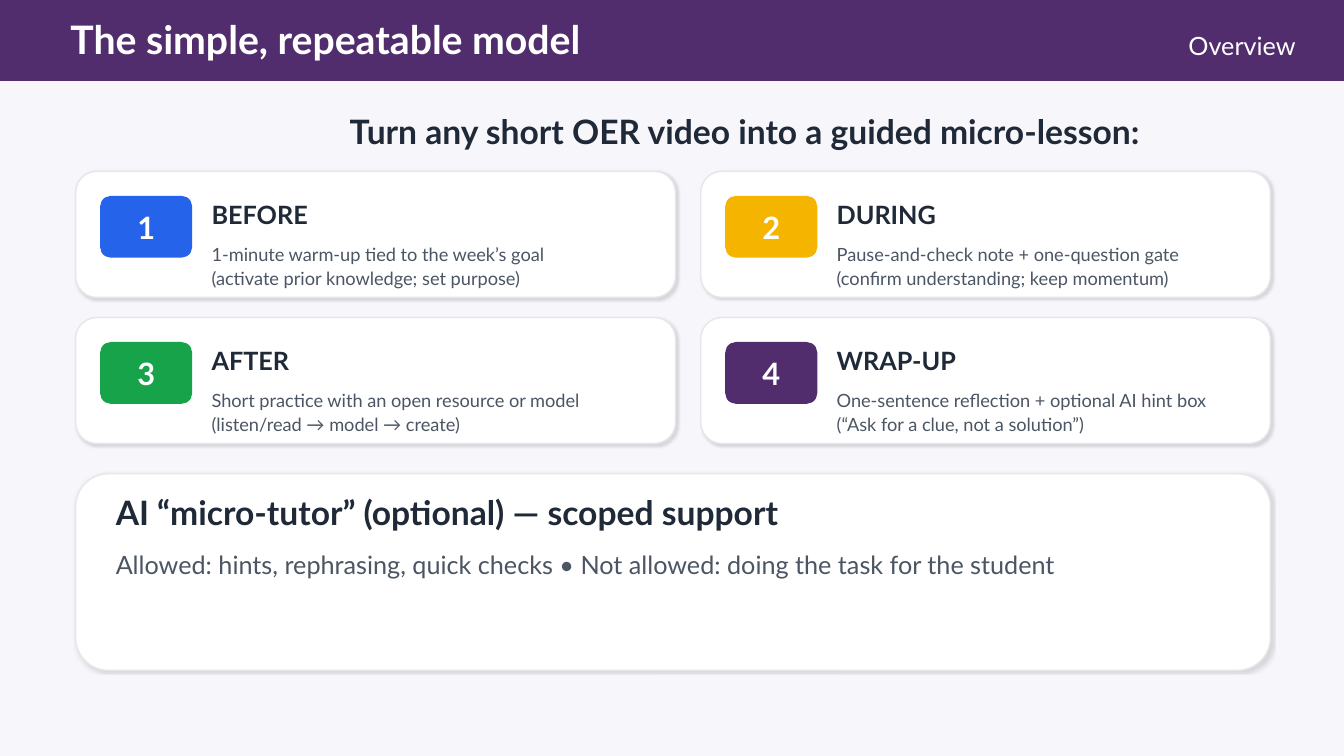
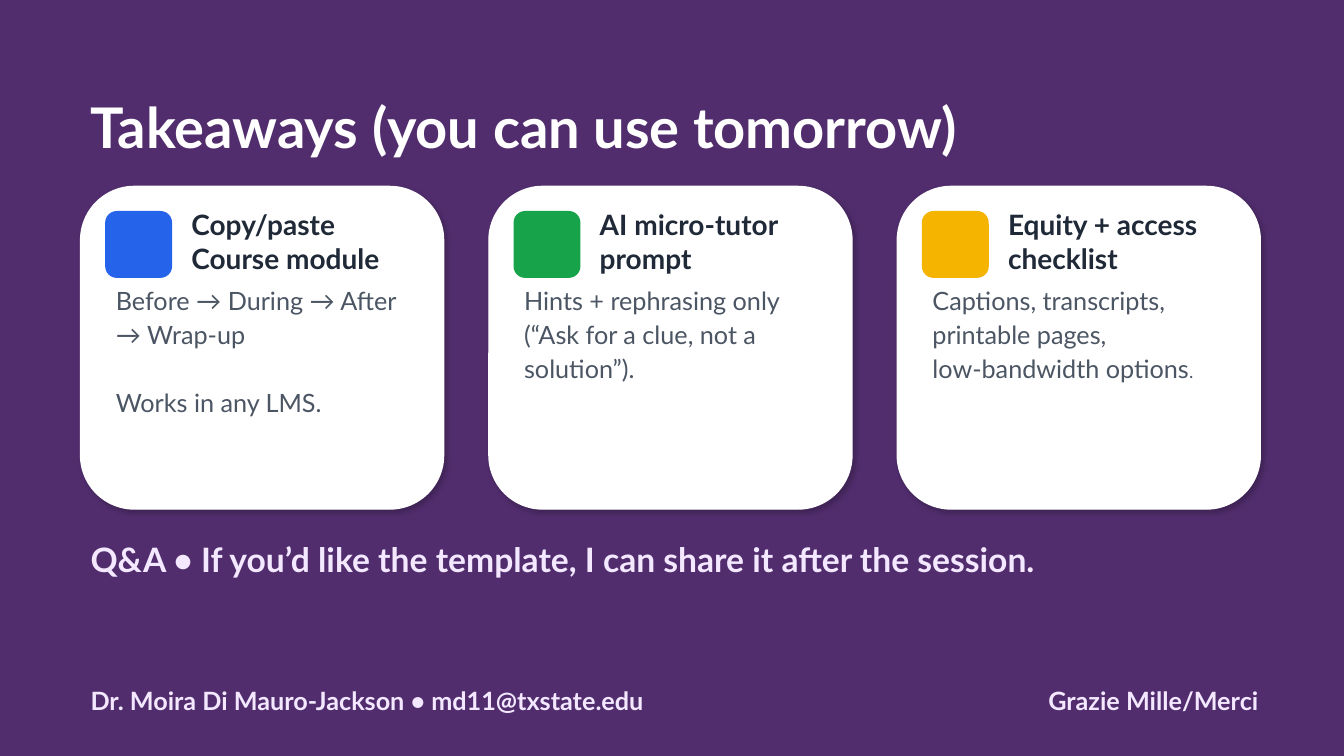
from lxml import etree
from pptx import Presentation
from pptx.dml.color import RGBColor
from pptx.enum.shapes import MSO_SHAPE
from pptx.enum.text import MSO_ANCHOR as Anchor, PP_ALIGN as Align
from pptx.oxml.ns import qn
from pptx.util import Inches, Pt

PURPLE = RGBColor(0x51, 0x2D, 0x6D)
BLUE = RGBColor(0x25, 0x63, 0xEB)
AMBER = RGBColor(0xF4, 0xB4, 0x00)
GREEN = RGBColor(0x16, 0xA3, 0x4A)
WHITE = RGBColor(0xFF, 0xFF, 0xFF)
PAPER = RGBColor(0xF7, 0xF7, 0xFB)
BORDER = RGBColor(0xE5, 0xE7, 0xEB)
INK = RGBColor(0x1F, 0x29, 0x37)
GRAY = RGBColor(0x4B, 0x55, 0x63)
LILAC = RGBColor(0xF3, 0xE8, 0xFF)
FONT = "Lato"

# Opacity in percent, blur and distance in points
SOFT_SHADOW = (12, 2, 1.2)
DEEP_SHADOW = (22, 4, 2)

STEPS = [
    ("1", BLUE, "BEFORE", ["1-minute warm-up tied to the week’s goal",
                           "(activate prior knowledge; set purpose)"]),
    ("2", AMBER, "DURING", ["Pause-and-check note + one-question gate",
                            "(confirm understanding; keep momentum)"]),
    ("3", GREEN, "AFTER", ["Short practice with an open resource or model",
                           "(listen/read → model → create)"]),
    ("4", PURPLE, "WRAP-UP", ["One-sentence reflection + optional AI hint box",
                              "(“Ask for a clue, not a solution”)"]),
]
TAKEAWAYS = [
    (BLUE, "Copy/paste Course module",
     ["Before → During → After → Wrap-up", "Works in any LMS."]),
    (GREEN, "AI micro-tutor prompt",
     ["Hints + rephrasing only", "(“Ask for a clue, not a solution”)."]),
    (AMBER, "Equity + access checklist",
     ["Captions, transcripts, printable pages,", "low-bandwidth options"]),
]


# Shared parts
def add_slide(presentation, background):
    slide = presentation.slides.add_slide(presentation.slide_layouts[6])
    slide.background.fill.solid()
    slide.background.fill.fore_color.rgb = background
    return slide


def add_box(slide, left, top, width, height, fill, line=None,
            shape_type=MSO_SHAPE.ROUNDED_RECTANGLE, shadow=None):
    shape = slide.shapes.add_shape(shape_type, Inches(left), Inches(top),
                                   Inches(width), Inches(height))
    shape.fill.solid()
    shape.fill.fore_color.rgb = fill
    shape.line.color.rgb = line or fill
    shape.line.width = Pt(1)
    shape.shadow.inherit = False
    if shadow:
        add_shadow(shape, *shadow)
    return shape


def add_shadow(shape, opacity, blur, distance):
    effects = shape._element.spPr.find(qn("a:effectLst"))
    outer = etree.SubElement(effects, qn("a:outerShdw"), blurRad=str(Pt(blur)),
                             dist=str(Pt(distance)), dir=str(45 * 60000),
                             algn="bl", rotWithShape="0")
    color = etree.SubElement(outer, qn("a:srgbClr"), val="000000")
    etree.SubElement(color, qn("a:alpha"), val=str(opacity * 1000))


def add_text(slide, left, top, width, height, lines, size, color, bold=False,
             align=Align.LEFT, anchor=Anchor.MIDDLE, spacing=None, tab=None):
    """Place one paragraph per line and return the paragraphs."""
    box = slide.shapes.add_textbox(Inches(left), Inches(top),
                                   Inches(width), Inches(height))
    frame = box.text_frame
    frame.word_wrap = True
    frame.vertical_anchor = anchor
    for index, line in enumerate(lines):
        paragraph = frame.add_paragraph() if index else frame.paragraphs[0]
        paragraph.add_run().text = line
        paragraph.alignment = align
        if spacing:
            paragraph.line_spacing = spacing
        if tab:
            tabs = etree.SubElement(paragraph._p.get_or_add_pPr(), qn("a:tabLst"))
            etree.SubElement(tabs, qn("a:tab"), pos=str(Inches(tab)), algn="l")
        font = paragraph.font
        font.name, font.size, font.bold = FONT, Pt(size), bold
        font.color.rgb = color
    return frame.paragraphs


# Model slide
def add_header(slide, title, section):
    add_box(slide, 0, 0, 13.33, 0.8, PURPLE, shape_type=MSO_SHAPE.RECTANGLE)
    add_text(slide, 0.6, 0.14, 9.25, 0.5, [title], 28, WHITE, bold=True)
    add_text(slide, 9.95, 0.2, 3, 0.5, [section], 18, WHITE, align=Align.RIGHT)


def add_step_card(slide, left, top, width, number, color, heading, lines):
    add_box(slide, left, top, width, 1.25, WHITE, BORDER, shadow=SOFT_SHADOW)
    add_box(slide, left + 0.25, top + 0.25, 0.9, 0.6, color)
    add_text(slide, left + 0.25, top + 0.28, 0.9, 0.55, [number], 22, WHITE,
             bold=True, align=Align.CENTER)
    text_left, text_width = left + 1.25, width - 1.5
    add_text(slide, text_left, top + 0.25, text_width, 0.35, [heading], 18, INK,
             bold=True)
    add_text(slide, text_left, top + 0.65, text_width, 0.4, lines, 13, GRAY,
             anchor=Anchor.TOP, spacing=1.08)


def add_tutor_panel(slide, left, top, width, height):
    add_box(slide, left, top, width, height, WHITE, BORDER, shadow=SOFT_SHADOW)
    add_text(slide, left + 0.3, top + 0.2, width - 0.65, 0.35,
             ["AI “micro-tutor” (optional) — scoped support"], 24, INK, bold=True)
    add_text(slide, left + 0.3, top + 0.55, width - 0.65, 0.7,
             ["Allowed: hints, rephrasing, quick checks • "
              "Not allowed: doing the task for the student"], 18, GRAY)


def build_model_slide(presentation):
    slide = add_slide(presentation, PAPER)
    add_header(slide, "The simple, repeatable model", "Overview")
    add_text(slide, 3.37, 1.05, 9.38, 0.5,
             ["Turn any short OER video into a guided micro-lesson:"], 24, INK,
             bold=True)
    columns = [(0.75, 5.95), (6.95, 5.65)]
    for index, step in enumerate(STEPS):
        row, column = divmod(index, 2)
        left, width = columns[column]
        add_step_card(slide, left, 1.7 + row * 1.45, width, *step)
    add_tutor_panel(slide, 0.75, 4.7, 11.85, 1.95)


# Takeaways slide
def add_takeaway_card(slide, left, top, color, heading, lines):
    add_box(slide, left, top, 3.6, 3.2, WHITE, shadow=DEEP_SHADOW)
    add_box(slide, left + 0.25, top + 0.25, 0.65, 0.65, color)
    add_text(slide, left + 1, top + 0.22, 2.4, 0.65, [heading], 20, INK, bold=True)
    return add_text(slide, left + 0.25, top + 0.9, 3.1, 2.1, lines, 18, GRAY,
                    anchor=Anchor.TOP, spacing=1.12)


def build_takeaways_slide(presentation):
    slide = add_slide(presentation, PURPLE)
    add_text(slide, 0.8, 0.9, 12, 0.7, ["Takeaways (you can use tomorrow)"], 40,
             WHITE, bold=True)
    module, _, checklist = [
        add_takeaway_card(slide, 0.8 + index * 4.05, 1.85, *takeaway)
        for index, takeaway in enumerate(TAKEAWAYS)]
    module[-1].space_before = Pt(24)
    full_stop = checklist[-1].add_run()
    full_stop.text = "."
    full_stop.font.size = Pt(13)

    # Closing lines
    add_text(slide, 0.8, 5.35, 12, 0.4,
             ["Q&A • If you’d like the template, I can share it after the session."],
             24, LILAC, bold=True)
    add_text(slide, 0.8, 6.6, 12, 0.7,
             ["Dr. Moira Di Mauro-Jackson • md11@txstate.edu\tGrazie Mille/Merci"],
             18, LILAC, bold=True, tab=9.5)


def main():
    presentation = Presentation()
    presentation.slide_width = Inches(13.33)
    presentation.slide_height = Inches(7.5)
    build_model_slide(presentation)
    build_takeaways_slide(presentation)
    presentation.save("out.pptx")


if __name__ == "__main__":
    main()
